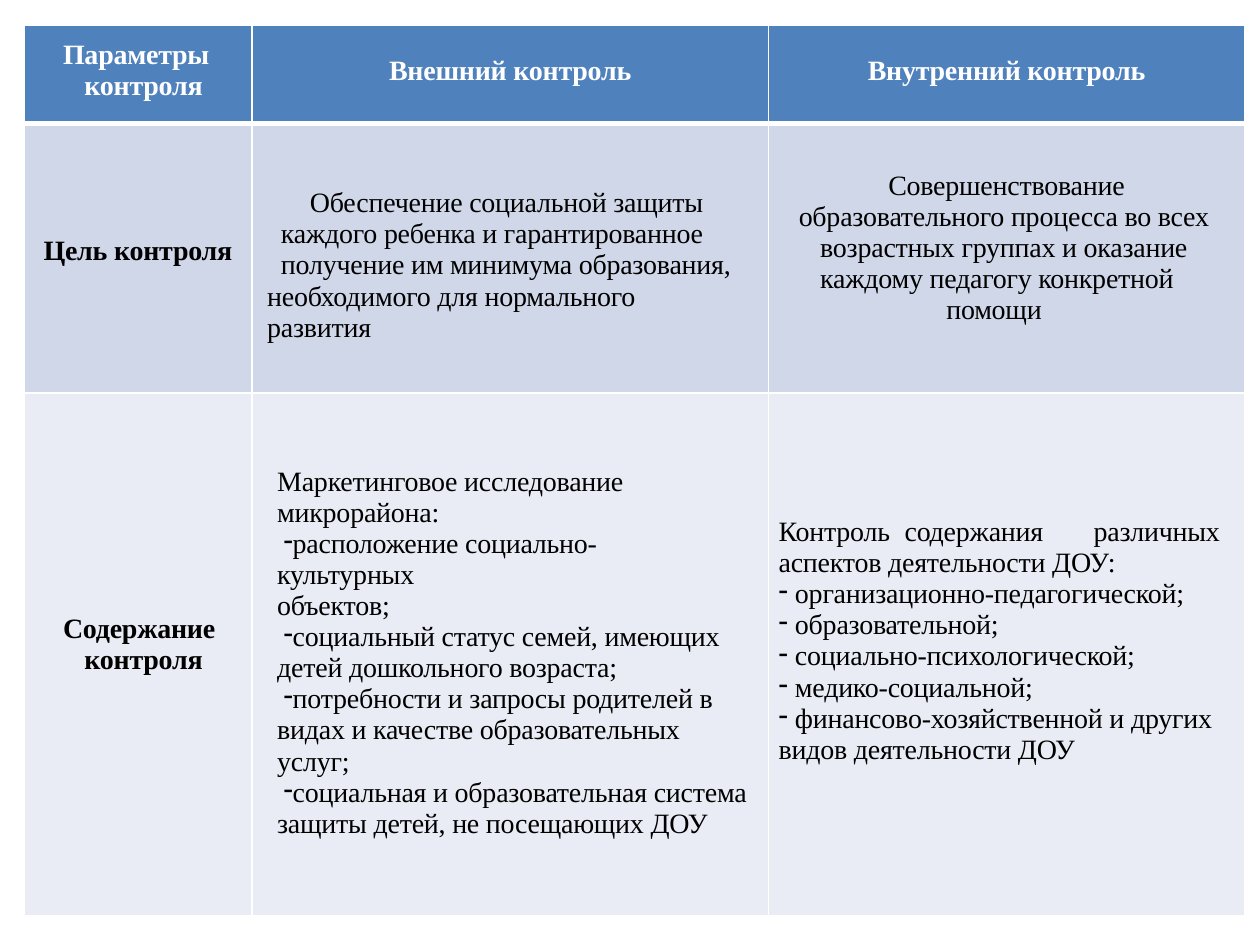
import dataclasses

import pptx
import pptx.dml.color
import pptx.enum.text
import pptx.oxml
import pptx.oxml.ns
import pptx.util

INCH = pptx.util.Inches
ALIGN = pptx.enum.text.PP_ALIGN


@dataclasses.dataclass(frozen=True)
class Theme:
    font: str = "Times New Roman"
    size: float = 16
    tracking: int = -10
    header: str = "4F81BC"
    goal: str = "D0D7E8"
    content: str = "E9ECF4"
    light: str = "FFFFFF"
    dark: str = "000000"
    rule: float = 1
    header_rule: float = 3


THEME = Theme()
SLIDE_WIDTH, SLIDE_HEIGHT = 10, 7.5
TABLE_LEFT, TABLE_TOP = 0.19, 0.2
COLUMNS = (1.81, 4.1, 3.78)
ROWS = (0.78, 2.14, 4.15)
ROW_STYLES = (
    {"fill": THEME.header, "color": THEME.light},
    {"fill": THEME.goal, "color": THEME.dark},
    {"fill": THEME.content, "color": THEME.dark},
)

CENTERED = {"align": ALIGN.CENTER}
LABEL = {"left": 0.48, "first": -0.17}
PLAIN = {"left": 0.2}
DASH = {"left": 0.2, "first": 0.05, "bullet": "-"}
NARROW_DASH = {**DASH, "right": 0.45}
HANGING_DASH = {"left": 0.21, "first": -0.13, "bullet": "-"}
ASPECTS = {"left": 0.08}

# Each cell: distance of the text from the cell top, then its paragraphs.
CELLS = (
    (
        (0.11, [("Параметры контроля", LABEL)]),
        (0.24, [("Внешний контроль", CENTERED)]),
        (0.24, [("Внутренний контроль", CENTERED)]),
    ),
    (
        (0.89, [("Цель контроля", CENTERED)]),
        (0.51, [
            ("Обеспечение социальной защиты каждого ребенка и гарантированное "
             "получение им минимума образования,", {"left": 0.23, "first": 0.23}),
            ("необходимого для нормального развития",
             {"left": 0.12, "right": 0.45}),
        ]),
        (0.37, [
            ("Совершенствование", {"left": 0.95}),
            ("образовательного процесса во всех возрастных группах и оказание "
             "каждому педагогу конкретной", {"left": 0.41, "first": -0.17}),
            ("помощи", {"right": 0.2, **CENTERED}),
        ]),
    ),
    (
        (1.75, [("Содержание контроля", LABEL)]),
        (0.58, [
            ("Маркетинговое исследование микрорайона:", PLAIN),
            ("расположение социально-культурных", NARROW_DASH),
            ("объектов;", PLAIN),
            ("социальный статус семей, имеющих детей дошкольного возраста;", DASH),
            ("потребности и запросы родителей в видах и качестве образовательных",
             DASH),
            ("услуг;", PLAIN),
            ("социальная и образовательная система защиты детей, "
             "не посещающих ДОУ", DASH),
        ]),
        (0.98, [
            ("Контроль\tсодержания\tразличных аспектов деятельности ДОУ:",
             {**ASPECTS, "tabs": (1.27, 2.69)}),
            ("организационно-педагогической;", HANGING_DASH),
            ("образовательной;", HANGING_DASH),
            ("социально-психологической;", HANGING_DASH),
            ("медико-социальной;", HANGING_DASH),
            ("финансово-хозяйственной и других", HANGING_DASH),
            ("видов деятельности ДОУ", ASPECTS),
        ]),
    ),
)


def add_child(parent, tag, **attributes):
    child = pptx.oxml.parse_xml(f"<a:{tag} {pptx.oxml.ns.nsdecls('a')}/>")
    for name, value in attributes.items():
        child.set(name, str(value))
    parent.append(child)
    return child


def format_paragraph(paragraph, layout):
    """Apply indents in inches, alignment, bullet and tab stops."""
    paragraph.alignment = layout.get("align", ALIGN.LEFT)
    properties = paragraph._p.get_or_add_pPr()
    indents = {"left": "marL", "right": "marR", "first": "indent"}
    for name, attribute in indents.items():
        properties.set(attribute, str(INCH(layout.get(name, 0))))
    if "bullet" in layout:
        add_child(properties, "buChar", char=layout["bullet"])
    else:
        add_child(properties, "buNone")
    if "tabs" in layout:
        stops = add_child(properties, "tabLst")
        for position in layout["tabs"]:
            add_child(stops, "tab", pos=INCH(position), algn="l")


def write_paragraph(paragraph, text, layout, color, bold):
    format_paragraph(paragraph, layout)
    run = paragraph.add_run()
    run.text = text
    font_values = {"name": THEME.font, "size": pptx.util.Pt(THEME.size), "bold": bold}
    for name, value in font_values.items():
        setattr(run.font, name, value)
    run.font.color.rgb = pptx.dml.color.RGBColor.from_string(color)
    run._r.get_or_add_rPr().set("spc", str(THEME.tracking))


def draw_borders(cell, widths):
    """Draw cell edges; must run before the fill is set."""
    properties = cell._tc.get_or_add_tcPr()
    for edge, width in widths.items():
        line = add_child(properties, f"ln{edge}", w=pptx.util.Pt(width))
        add_child(add_child(line, "solidFill"), "srgbClr", val=THEME.light)


def fill_cell(cell, row, column, style):
    text_top, paragraphs = CELLS[row][column]
    cell_values = {
        "margin_left": 0, "margin_right": 0, "margin_bottom": 0,
        "margin_top": INCH(text_top),
        "vertical_anchor": pptx.enum.text.MSO_ANCHOR.TOP,
    }
    for name, value in cell_values.items():
        setattr(cell, name, value)
    draw_borders(cell, {
        "L": THEME.rule,
        "R": THEME.rule,
        "T": THEME.header_rule if row == 1 else THEME.rule,
        "B": THEME.header_rule if row == 0 else THEME.rule,
    })
    cell.fill.solid()
    cell.fill.fore_color.rgb = pptx.dml.color.RGBColor.from_string(style["fill"])
    frame = cell.text_frame
    bold = row == 0 or column == 0
    for index, (text, layout) in enumerate(paragraphs):
        paragraph = frame.add_paragraph() if index else frame.paragraphs[0]
        write_paragraph(paragraph, text, layout, style["color"], bold)


def add_control_table(slide):
    control = slide.shapes.add_table(
        len(ROWS), len(COLUMNS), INCH(TABLE_LEFT), INCH(TABLE_TOP),
        INCH(sum(COLUMNS)), INCH(sum(ROWS))).table
    for column, width in zip(control.columns, COLUMNS):
        column.width = INCH(width)
    for row, height in zip(control.rows, ROWS):
        row.height = INCH(height)
    for row, style in enumerate(ROW_STYLES):
        for column in range(len(COLUMNS)):
            fill_cell(control.cell(row, column), row, column, style)


def main():
    presentation = pptx.Presentation()
    presentation.slide_width = INCH(SLIDE_WIDTH)
    presentation.slide_height = INCH(SLIDE_HEIGHT)
    slide = presentation.slides.add_slide(presentation.slide_layouts[6])
    add_control_table(slide)
    presentation.save("out.pptx")


if __name__ == "__main__":
    main()
